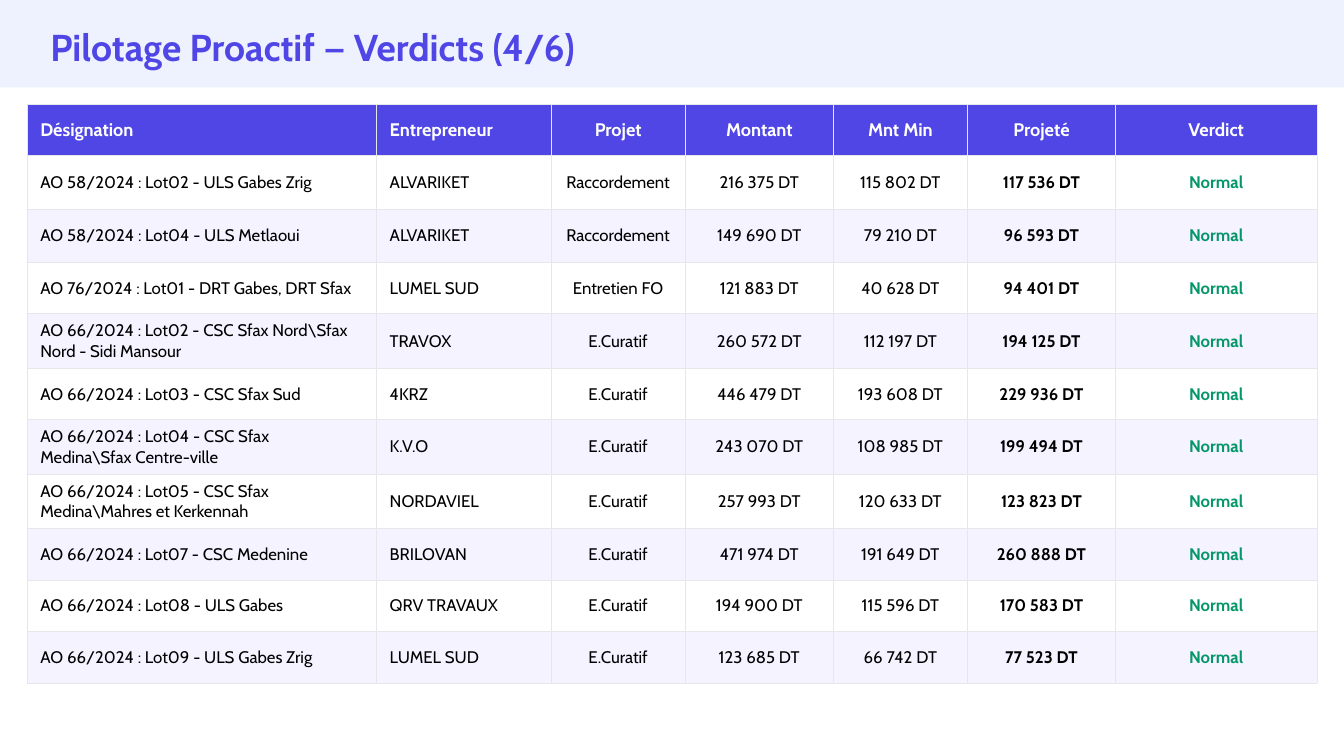
from lxml import etree
from pptx import Presentation
from pptx import util as u
from pptx.dml.color import RGBColor
from pptx.enum import shapes, text
from pptx.oxml import ns

INDIGO = RGBColor(0x4F, 0x46, 0xE5)
PALE_BLUE = RGBColor(0xEE, 0xF2, 0xFF)
LAVENDER = RGBColor(0xF5, 0xF3, 0xFF)
WHITE = RGBColor(0xFF, 0xFF, 0xFF)
BLACK = RGBColor(0, 0, 0)
GREEN = RGBColor(0x05, 0x96, 0x69)
BORDER_GREY = RGBColor(0xE5, 0xE7, 0xEB)

# The slide is a grid of square units, 15 to the inch.
SLIDE_COLUMNS, SLIDE_ROWS = 200, 112.5
COLUMN_SPANS = [52, 26, 20, 22, 20, 22, 30]
LOW_ROW, TALL_ROW = 7.65, 7.95
TALL_ROWS = {1, 2, 4, 6, 7}
LEFT_ALIGNED = 2
PROJECTED, VERDICT = 5, 6

HEADINGS = ["Désignation", "Entrepreneur", "Projet", "Montant",
            "Mnt Min", "Projeté", "Verdict"]
CONTRACTS = [
    ("AO 58/2024 : Lot02 - ULS Gabes Zrig", "ALVARIKET", "Raccordement",
     "216 375 DT", "115 802 DT", "117 536 DT"),
    ("AO 58/2024 : Lot04 - ULS Metlaoui", "ALVARIKET", "Raccordement",
     "149 690 DT", "79 210 DT", "96 593 DT"),
    ("AO 76/2024 : Lot01 - DRT Gabes, DRT Sfax", "LUMEL SUD", "Entretien FO",
     "121 883 DT", "40 628 DT", "94 401 DT"),
    ("AO 66/2024 : Lot02 - CSC Sfax Nord\\Sfax Nord - Sidi Mansour", "TRAVOX",
     "E.Curatif", "260 572 DT", "112 197 DT", "194 125 DT"),
    ("AO 66/2024 : Lot03 - CSC Sfax Sud", "4KRZ",
     "E.Curatif", "446 479 DT", "193 608 DT", "229 936 DT"),
    ("AO 66/2024 : Lot04 - CSC Sfax Medina\\Sfax Centre-ville", "K.V.O",
     "E.Curatif", "243 070 DT", "108 985 DT", "199 494 DT"),
    ("AO 66/2024 : Lot05 - CSC Sfax Medina\\Mahres et Kerkennah", "NORDAVIEL",
     "E.Curatif", "257 993 DT", "120 633 DT", "123 823 DT"),
    ("AO 66/2024 : Lot07 - CSC Medenine", "BRILOVAN",
     "E.Curatif", "471 974 DT", "191 649 DT", "260 888 DT"),
    ("AO 66/2024 : Lot08 - ULS Gabes", "QRV TRAVAUX",
     "E.Curatif", "194 900 DT", "115 596 DT", "170 583 DT"),
    ("AO 66/2024 : Lot09 - ULS Gabes Zrig", "LUMEL SUD",
     "E.Curatif", "123 685 DT", "66 742 DT", "77 523 DT"),
]


def grid(units):
    return u.Inches(units / 15)


def apply(target, formats):
    for attribute, value in formats.items():
        setattr(target, attribute, value)


class VerdictSlide:
    """Holds the slide and the style shared by its elements."""

    font_name = "Cabin"
    cell_format = {
        "margin_left": grid(2), "margin_right": grid(2),
        "margin_top": grid(1), "margin_bottom": grid(1),
        "vertical_anchor": text.MSO_ANCHOR.MIDDLE,
    }

    def __init__(self, presentation):
        self.slide = presentation.slides.add_slide(presentation.slide_layouts[5])

    def wording(self, paragraph, words, size, color, bold, align):
        paragraph.alignment = align
        run = paragraph.add_run()
        run.text = words
        apply(run.font, {"name": self.font_name, "size": u.Pt(size), "bold": bold})
        run.font.color.rgb = color

    def band(self, height):
        """Draws the full-width strip that lies behind the title."""
        strip = self.slide.shapes.add_shape(
            shapes.MSO_SHAPE.RECTANGLE, 0, 0, grid(SLIDE_COLUMNS), grid(height))
        strip.shadow.inherit = False
        strip.fill.solid()
        strip.fill.fore_color.rgb = PALE_BLUE
        strip.line.fill.background()
        self.slide.shapes.title.element.addprevious(strip.element)

    def title(self, words, left, top, width, height):
        heading = self.slide.shapes.title
        apply(heading, {"left": grid(left), "top": grid(top),
                        "width": grid(width), "height": grid(height)})
        apply(heading.text_frame, {
            "word_wrap": True, "auto_size": text.MSO_AUTO_SIZE.NONE,
            "vertical_anchor": text.MSO_ANCHOR.MIDDLE})
        self.wording(heading.text_frame.paragraphs[0], words, 26.7,
                     INDIGO, True, text.PP_ALIGN.LEFT)

    def table(self, records, left, top):
        heights = [TALL_ROW if row in TALL_ROWS else LOW_ROW
                   for row in range(len(records))]
        table = self.slide.shapes.add_table(
            len(records), len(COLUMN_SPANS), grid(left), grid(top),
            grid(sum(COLUMN_SPANS)), grid(sum(heights))).table
        apply(table, {"first_row": False, "horz_banding": False})
        for column, span in zip(table.columns, COLUMN_SPANS):
            column.width = grid(span)
        for row, height in zip(table.rows, heights):
            row.height = grid(height)
        for row, record in enumerate(records):
            for column, words in enumerate(record):
                self.cell(table.cell(row, column), words, row, column)

    def cell(self, cell, words, row, column):
        apply(cell, self.cell_format)
        self.borders(cell)
        if row == 0:
            fill, color, size, bold = INDIGO, WHITE, 13, True
        else:
            fill = WHITE if row % 2 else LAVENDER
            color = GREEN if column == VERDICT else BLACK
            size, bold = 12, column in (PROJECTED, VERDICT)
        cell.fill.solid()
        cell.fill.fore_color.rgb = fill
        align = (text.PP_ALIGN.LEFT if column < LEFT_ALIGNED
                 else text.PP_ALIGN.CENTER)
        self.wording(cell.text_frame.paragraphs[0], words, size, color, bold, align)

    def borders(self, cell):
        properties = cell._tc.get_or_add_tcPr()
        for side in ("lnL", "lnR", "lnT", "lnB"):
            edge = etree.SubElement(properties, ns.qn(f"a:{side}"), w=str(u.Pt(0.5)))
            fill = etree.SubElement(edge, ns.qn("a:solidFill"))
            etree.SubElement(fill, ns.qn("a:srgbClr"), val=str(BORDER_GREY))


def main():
    presentation = Presentation()
    apply(presentation, {"slide_width": grid(SLIDE_COLUMNS),
                         "slide_height": grid(SLIDE_ROWS)})
    verdicts = VerdictSlide(presentation)
    verdicts.band(13)
    verdicts.title("Pilotage Proactif — Verdicts (4/6)", 6, 2.4, 188, 9)
    records = [HEADINGS] + [(*contract, "Normal") for contract in CONTRACTS]
    verdicts.table(records, 4, 15.5)
    presentation.save("out.pptx")


if __name__ == "__main__":
    main()
